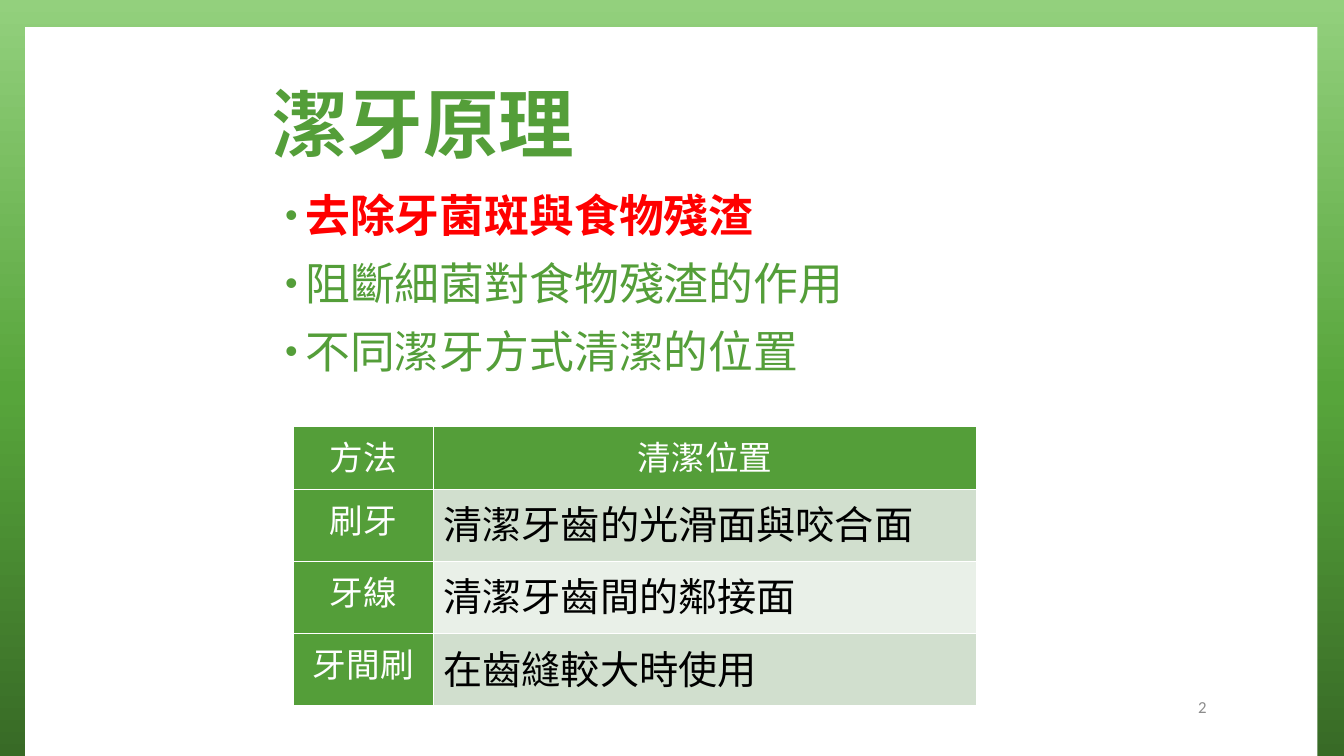
from lxml.etree import SubElement
from pptx import Presentation
from pptx.dml.color import RGBColor as Rgb
from pptx.enum.shapes import MSO_SHAPE as Kind
from pptx.enum.text import MSO_ANCHOR as Anchor, MSO_AUTO_SIZE as Fit, PP_ALIGN as Align
from pptx.oxml import parse_xml
from pptx.oxml.ns import nsdecls, qn
from pptx.util import Pt

HUE = {"green": "549E39", "red": "FF0000", "white": "FFFFFF", "black": "000000",
       "gray": "8C8C8C", "dark": "386A26", "mid": "57A53B", "light": "93D07D",
       "odd": "D1DFCE", "even": "E9F0E8"}
CJK = "Noto Sans CJK SC"
POINTS = ["去除牙菌斑與食物殘渣", "阻斷細菌對食物殘渣的作用", "不同潔牙方式清潔的位置"]
ROWS = [("方法", "清潔位置"), ("刷牙", "清潔牙齒的光滑面與咬合面"),
        ("牙線", "清潔牙齒間的鄰接面"), ("牙間刷", "在齒縫較大時使用")]


def color(name):
    """Return the named colour."""
    return Rgb.from_string(HUE[name])


def style(para, size, hue, bold=False, align=Align.LEFT, face=CJK):
    """Format one paragraph, with its East Asian face."""
    para.alignment = align
    font = para.font
    font.size, font.bold, font.name = Pt(size), bold, face
    font.color.rgb = color(hue)
    props = para._p.pPr.find(qn("a:defRPr"))
    SubElement(props, qn("a:ea"), typeface=face)


def place(shape, left, top, width, height):
    """Set a shape's box in points."""
    shape.left, shape.top = Pt(left), Pt(top)
    shape.width, shape.height = Pt(width), Pt(height)


def add_back(slide):
    """Paint the green gradient and the white panel."""
    stops = "".join(f'<a:gs pos="{pos}"><a:srgbClr val="{HUE[name]}"/></a:gs>'
                    for pos, name in ((0, "dark"), (48000, "mid"), (100000, "light")))
    slide.background.fill.solid()
    props = slide._element.cSld.bg.bgPr
    props.replace(props[0], parse_xml(
        f'<a:gradFill {nsdecls("a")} rotWithShape="1"><a:gsLst>{stops}</a:gsLst>'
        '<a:lin ang="16200000" scaled="0"/></a:gradFill>'))
    panel = slide.shapes.add_shape(Kind.RECTANGLE, Pt(18), Pt(19.4), Pt(923), Pt(521.3))
    panel.shadow.inherit = False
    panel.fill.solid()
    panel.fill.fore_color.rgb = color("white")
    panel.line.fill.background()
    slide.shapes._spTree.insert(2, panel._element)


def add_title(slide, text):
    """Fill and place the title."""
    title = slide.shapes.title
    place(title, 187.2, 48.2, 306, 86.4)
    frame = title.text_frame
    frame.text = text
    frame.auto_size, frame.vertical_anchor = Fit.NONE, Anchor.MIDDLE
    para = frame.paragraphs[0]
    para.line_spacing = 0.9
    style(para, 54, "green", True)


def add_text(slide, left, top, width, height):
    """Add an empty wrapping text box and return its frame."""
    frame = slide.shapes.add_textbox(Pt(left), Pt(top), Pt(width), Pt(height)).text_frame
    frame.word_wrap = True
    return frame


def add_bullet(para):
    """Give a paragraph a hanging green bullet."""
    props = para._p.get_or_add_pPr()
    props.set("marL", str(Pt(18)))
    props.set("indent", str(-Pt(14.4)))
    tint = SubElement(props, qn("a:buClr"))
    SubElement(tint, qn("a:srgbClr"), val=HUE["green"])
    SubElement(props, qn("a:buSzPct"), val="80000")
    SubElement(props, qn("a:buFont"), typeface="Arial")
    SubElement(props, qn("a:buChar"), char="•")


def add_list(slide, items):
    """Add the bullet list, with its first item in bold red."""
    frame = add_text(slide, 193, 134.6, 534.2, 165.6)
    frame.text = "\n".join(items)
    for i, para in enumerate(frame.paragraphs):
        para.line_spacing = 0.9
        para.space_before = Pt(14 if i else 0)
        add_bullet(para)
        style(para, 32, "green" if i else "red", bold=not i)


def add_grid(slide, rows):
    """Add the table of methods and places."""
    grid = slide.shapes.add_table(len(rows), 2, Pt(209.5), Pt(304.6),
                                  Pt(488.2), Pt(200.2)).table
    for col, width in zip(grid.columns, (100.1, 388.1)):
        col.width = Pt(width)
    for r, texts in enumerate(rows):
        grid.rows[r].height = Pt(51.6 if r else 44.9)
        for c, text in enumerate(texts):
            cell = grid.cell(r, c)
            cell.text = text
            head = r == 0 or c == 0
            cell.fill.solid()
            cell.fill.fore_color.rgb = color("green" if head else "odd" if r % 2 else "even")
            para = cell.text_frame.paragraphs[0]
            if head:
                style(para, 24, "white", align=Align.CENTER)
            else:
                style(para, 28, "black")


def add_number(slide, text):
    """Add the page number."""
    frame = add_text(slide, 734.4, 490.3, 134.6, 28.8)
    frame.text = text
    frame.vertical_anchor = Anchor.MIDDLE
    style(frame.paragraphs[0], 12, "gray", align=Align.RIGHT, face="Calibri")


def main():
    """Build and save the slide."""
    deck = Presentation()
    deck.slide_width, deck.slide_height = Pt(960), Pt(540)
    slide = deck.slides.add_slide(deck.slide_layouts[5])
    add_back(slide)
    add_title(slide, "潔牙原理")
    add_list(slide, POINTS)
    add_number(slide, "2")
    add_grid(slide, ROWS)
    deck.save("out.pptx")


if __name__ == "__main__":
    main()
